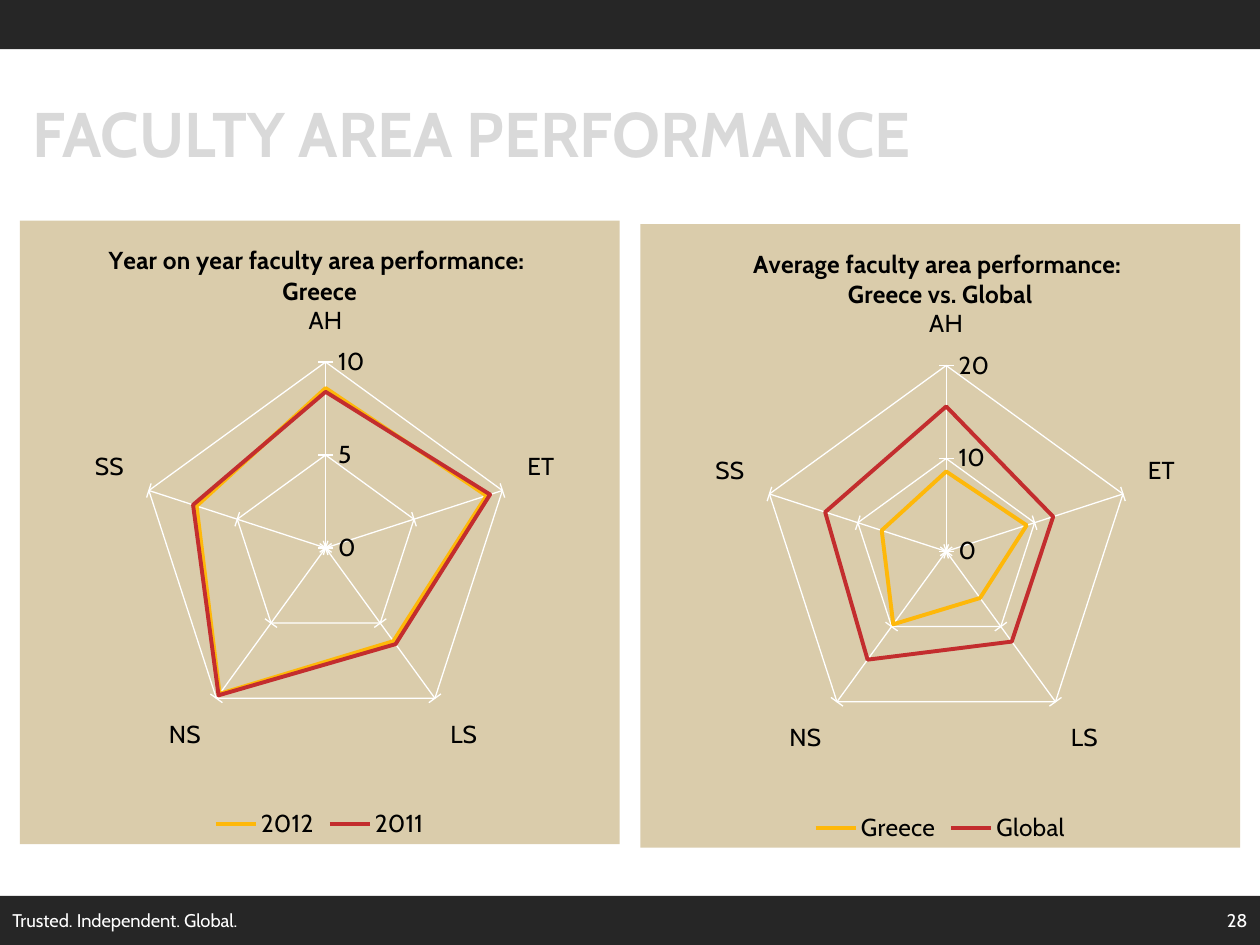
from lxml import etree
from pptx import Presentation
from pptx import util as u
from pptx.chart import data as cd
from pptx.dml.color import RGBColor
from pptx.enum import chart as ce
from pptx.enum import shapes, text
from pptx.oxml import parse_xml
from pptx.oxml.ns import nsdecls, qn

FONT = "Cabin"
DARK = RGBColor(0x26, 0x26, 0x26)
WHITE = RGBColor(0xFF, 0xFF, 0xFF)
BLACK = RGBColor(0, 0, 0)
TITLE_GREY = RGBColor(0xD9, 0xD9, 0xD9)
SAND = RGBColor(0xDA, 0xCC, 0xAB)
GOLD = RGBColor(0xFE, 0xB8, 0x0A)
RED = RGBColor(0xC3, 0x2D, 0x2E)

SLIDE_W, SLIDE_H = u.Cm(25.4), u.Cm(19.05)
BAR_H = u.Cm(0.99)
FOOTER_TOP = SLIDE_H - BAR_H
AREAS = ["AH", "ET", "LS", "NS", "SS"]
GREECE_2012 = [8.6, 9.1, 6.2, 9.7, 7.3]
PLOT = {"x": 0.2, "y": 0.21, "w": 0.62, "h": 0.63}


def set_font(font, size, color, bold=False):
    values = {"name": FONT, "size": u.Pt(size), "bold": bold}
    for key, value in values.items():
        setattr(font, key, value)
    font.color.rgb = color


def add_bar(s, top):
    sp = s.shapes.add_shape(shapes.MSO_SHAPE.RECTANGLE, 0, top, SLIDE_W, BAR_H)
    sp.shadow.inherit = False
    sp.fill.solid()
    sp.fill.fore_color.rgb = DARK
    sp.line.fill.background()


def set_title(s, wording):
    sp = s.shapes.title
    box = {"left": u.Cm(0.4), "top": u.Cm(1.4),
           "width": u.Cm(24.6), "height": u.Cm(2.54)}
    for key, value in box.items():
        setattr(sp, key, value)
    tf = sp.text_frame
    tf.vertical_anchor = text.MSO_ANCHOR.MIDDLE
    p = tf.paragraphs[0]
    p.alignment = text.PP_ALIGN.LEFT
    r = p.add_run()
    r.text = wording
    set_font(r.font, 36, TITLE_GREY, True)


def add_footer_text(s, left, width, wording, align):
    tf = s.shapes.add_textbox(left, FOOTER_TOP, width, BAR_H).text_frame
    tf.word_wrap = True
    tf.vertical_anchor = text.MSO_ANCHOR.MIDDLE
    p = tf.paragraphs[0]
    p.alignment = align
    r = p.add_run()
    r.text = wording
    set_font(r.font, 10.5, WHITE)


def white_line(fmt):
    fmt.line.color.rgb = WHITE
    fmt.line.width = u.Pt(0.75)


def fill_chart(chart):
    chart.element.find(qn("c:chart")).addnext(parse_xml(
        f'<c:spPr {nsdecls("c", "a")}><a:solidFill><a:srgbClr val="{SAND}"/>'
        '</a:solidFill><a:ln><a:noFill/></a:ln></c:spPr>'))


def place_plot(chart):
    plot_area = chart.element.find(f'{qn("c:chart")}/{qn("c:plotArea")}')
    for old in plot_area.findall(qn("c:layout")):
        plot_area.remove(old)
    layout = etree.Element(qn("c:layout"))
    manual = etree.SubElement(layout, qn("c:manualLayout"))
    values = {"layoutTarget": "inner", "xMode": "edge", "yMode": "edge", **PLOT}
    for key, value in values.items():
        etree.SubElement(manual, qn(f"c:{key}")).set("val", str(value))
    plot_area.insert(0, layout)


def format_axes(chart, maximum):
    cat, val = chart.category_axis, chart.value_axis
    cat.major_tick_mark = ce.XL_TICK_MARK.OUTSIDE
    scale = {"minimum_scale": 0, "maximum_scale": maximum,
             "major_unit": maximum / 2, "major_tick_mark": ce.XL_TICK_MARK.CROSS}
    for key, value in scale.items():
        setattr(val, key, value)
    val.tick_labels.number_format = "0"
    val.tick_labels.number_format_is_linked = False
    for axis in (cat, val):
        axis.has_major_gridlines = True
        white_line(axis.major_gridlines.format)
        white_line(axis.format)
        set_font(axis.tick_labels.font, 14, BLACK)


def add_radar(s, left, top, title_lines, series, maximum):
    data = cd.CategoryChartData()
    data.categories = AREAS
    for name, values in series:
        data.add_series(name, values)
    chart = s.shapes.add_chart(ce.XL_CHART_TYPE.RADAR, left, top,
                               u.Cm(12.09), u.Cm(12.57), data).chart
    set_font(chart.font, 14, BLACK)
    fill_chart(chart)
    place_plot(chart)
    format_axes(chart, maximum)

    chart.has_title = True
    tf = chart.chart_title.text_frame
    for i, line in enumerate(title_lines):
        p = tf.add_paragraph() if i else tf.paragraphs[0]
        r = p.add_run()
        r.text = line
        set_font(r.font, 14, BLACK, True)

    chart.has_legend = True
    chart.legend.position = ce.XL_LEGEND_POSITION.BOTTOM
    chart.legend.include_in_layout = True
    set_font(chart.legend.font, 14, BLACK)

    chart.plots[0].vary_by_categories = False
    for ser, color in zip(chart.plots[0].series, (GOLD, RED)):
        ser.marker.style = ce.XL_MARKER_STYLE.NONE
        ser.format.line.color.rgb = color
        ser.format.line.width = u.Pt(2.25)


def main():
    prs = Presentation()
    prs.slide_width, prs.slide_height = SLIDE_W, SLIDE_H
    s = prs.slides.add_slide(prs.slide_layouts[5])
    for top in (FOOTER_TOP, 0):
        add_bar(s, top)
    set_title(s, "FACULTY AREA PERFORMANCE")
    split = u.Cm(19.47)
    add_footer_text(s, 0, split, "Trusted. Independent. Global.",
                    text.PP_ALIGN.LEFT)
    add_footer_text(s, split, SLIDE_W - split, "28", text.PP_ALIGN.RIGHT)
    add_radar(s, u.Cm(0.4), u.Cm(4.45),
              ["Year on year faculty area performance: ", "Greece"],
              [("2012", GREECE_2012), ("2011", [8.4, 9.3, 6.4, 9.8, 7.5])], 10)
    add_radar(s, u.Cm(12.91), u.Cm(4.52),
              ["Average faculty area performance: ", "Greece vs. Global"],
              [("Greece", GREECE_2012),
               ("Global", [15.6, 12.1, 12, 14.4, 13.7])], 20)
    prs.save("out.pptx")


if __name__ == "__main__":
    main()
